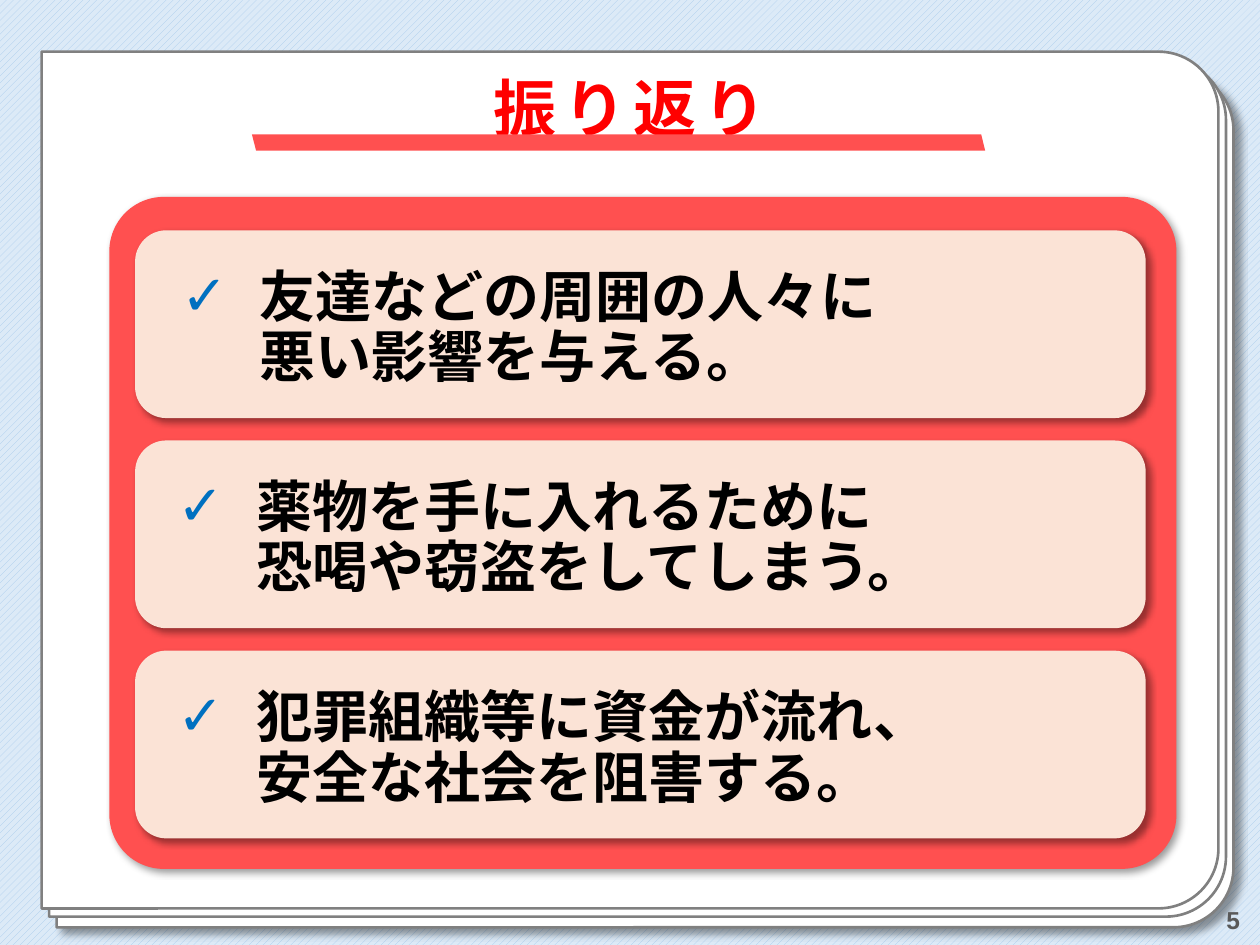
from lxml import etree
from pptx import Presentation
from pptx.dml.color import RGBColor
from pptx.enum import dml, lang, shapes, text
from pptx.oxml import ns
from pptx.util import Pt

COLORS = {
    "sky": "DCEAF7", "stripe": "A6CAEC", "paper": "FFFFFF", "edge": "808080",
    "red": "FF5050", "title": "FF0000", "card": "FBE3D6", "ink": "000000",
    "check": "0070C0", "number": "595959",
}
color = {name: RGBColor.from_string(value) for name, value in COLORS.items()}


def add_box(kind, left, top, width, height, fill, shadow=0):
    """Add a filled shape without outline; shadow is its distance in points."""
    box = page.shapes.add_shape(kind, Pt(left), Pt(top), Pt(width), Pt(height))
    box.fill.solid()
    box.fill.fore_color.rgb = color[fill]
    box.line.fill.background()
    box.shadow.inherit = False
    if shadow:
        effects = box._element.spPr.find(ns.qn("a:effectLst"))
        outer = etree.SubElement(effects, ns.qn("a:outerShdw"), blurRad=str(Pt(4)),
                                 dist=str(Pt(shadow)), dir="2700000", algn="tl", rotWithShape="0")
        black = etree.SubElement(outer, ns.qn("a:srgbClr"), val=COLORS["ink"])
        etree.SubElement(black, ns.qn("a:alpha"), val="40000")
    return box


def add_span(para, words, size, ink):
    span = para.add_run()
    span.text = words
    span.font.name = "Arial"
    span.font.size = Pt(size)
    span.font.bold = True
    span.font.color.rgb = color[ink]
    span.font.language_id = lang.MSO_LANGUAGE_ID.JAPANESE
    return span


deck = Presentation()
deck.slide_width, deck.slide_height = Pt(720), Pt(540)
page = deck.slides.add_slide(deck.slide_layouts[6])

# Striped background
backdrop = page.background.fill
backdrop.patterned()
backdrop.pattern = dml.MSO_PATTERN.WIDE_UPWARD_DIAGONAL
backdrop.fore_color.rgb = color["stripe"]
backdrop.back_color.rgb = color["sky"]

# Stack of three sheets, rounded on the right
for left, top, shadow in [(123.8, -51.1, 5), (119.5, -57.2, 0), (115.2, -61.9, 0)]:
    sheet = add_box(shapes.MSO_SHAPE.ROUND_2_SAME_RECTANGLE, left, top, 489.6, 672.5, "paper", shadow)
    sheet.rotation = 90
    sheet.adjustments[0] = 0.07
    sheet.adjustments[1] = 0
    sheet.line.color.rgb = color["edge"]
    sheet.line.width = Pt(1.5)

# Slide number and title
for words, area, size, ink, align in [
    ("5", (553.7, 511.2, 162, 28.8), 14, "number", text.PP_ALIGN.RIGHT),
    ("振り返り", (49, 25.2, 622, 77.8), 36, "title", text.PP_ALIGN.CENTER),
]:
    box = page.shapes.add_textbox(*[Pt(length) for length in area])
    box.text_frame.word_wrap = True
    box.text_frame.vertical_anchor = text.MSO_ANCHOR.MIDDLE
    para = box.text_frame.paragraphs[0]
    para.alignment = align
    span = add_span(para, words, size, ink)
para.line_spacing = 0.9
span.font._element.set("spc", "400")

# Red panel
panel = add_box(shapes.MSO_SHAPE.ROUNDED_RECTANGLE, 62.5, 112.5, 609.8, 384, "red", 3)
panel.adjustments[0] = 0.081

# Review cards
cards = [
    (59, ["友達などの周囲の人々に", "悪い影響を与える。"]),
    (57, ["薬物を手に入れるために", "恐喝や窃盗をしてしまう。"]),
    (57, ["犯罪組織等に資金が流れ、", "安全な社会を阻害する。"]),
]
for row, (indent, lines) in enumerate(cards):
    card = add_box(shapes.MSO_SHAPE.ROUNDED_RECTANGLE, 77.2, 131.6 + 120.1 * row, 577.5, 107.3, "card", 3)
    frame = card.text_frame
    frame.word_wrap = True
    frame.vertical_anchor = text.MSO_ANCHOR.MIDDLE
    frame.margin_top, frame.margin_bottom = Pt(14.4), Pt(8.6)
    para = frame.paragraphs[0]
    para.alignment = text.PP_ALIGN.LEFT
    para.line_spacing = 0.9
    props = para._p.get_or_add_pPr()
    props.set("marL", str(Pt(indent)))
    props.set("indent", str(Pt(-45)))
    bullet_color = etree.SubElement(props, ns.qn("a:buClr"))
    etree.SubElement(bullet_color, ns.qn("a:srgbClr"), val=COLORS["check"])
    etree.SubElement(props, ns.qn("a:buFont"), typeface="Arial")
    etree.SubElement(props, ns.qn("a:buChar"), char="✓")
    for number, line in enumerate(lines):
        if number:
            para.add_line_break()
        add_span(para, line, 32, "ink")

# Slanted bar under the title
bar = add_box(shapes.MSO_SHAPE.PARALLELOGRAM, 144, 76.8, 419, 9.2, "red")
bar._element.spPr.find(ns.qn("a:xfrm")).set("flipH", "1")

deck.save("out.pptx")
